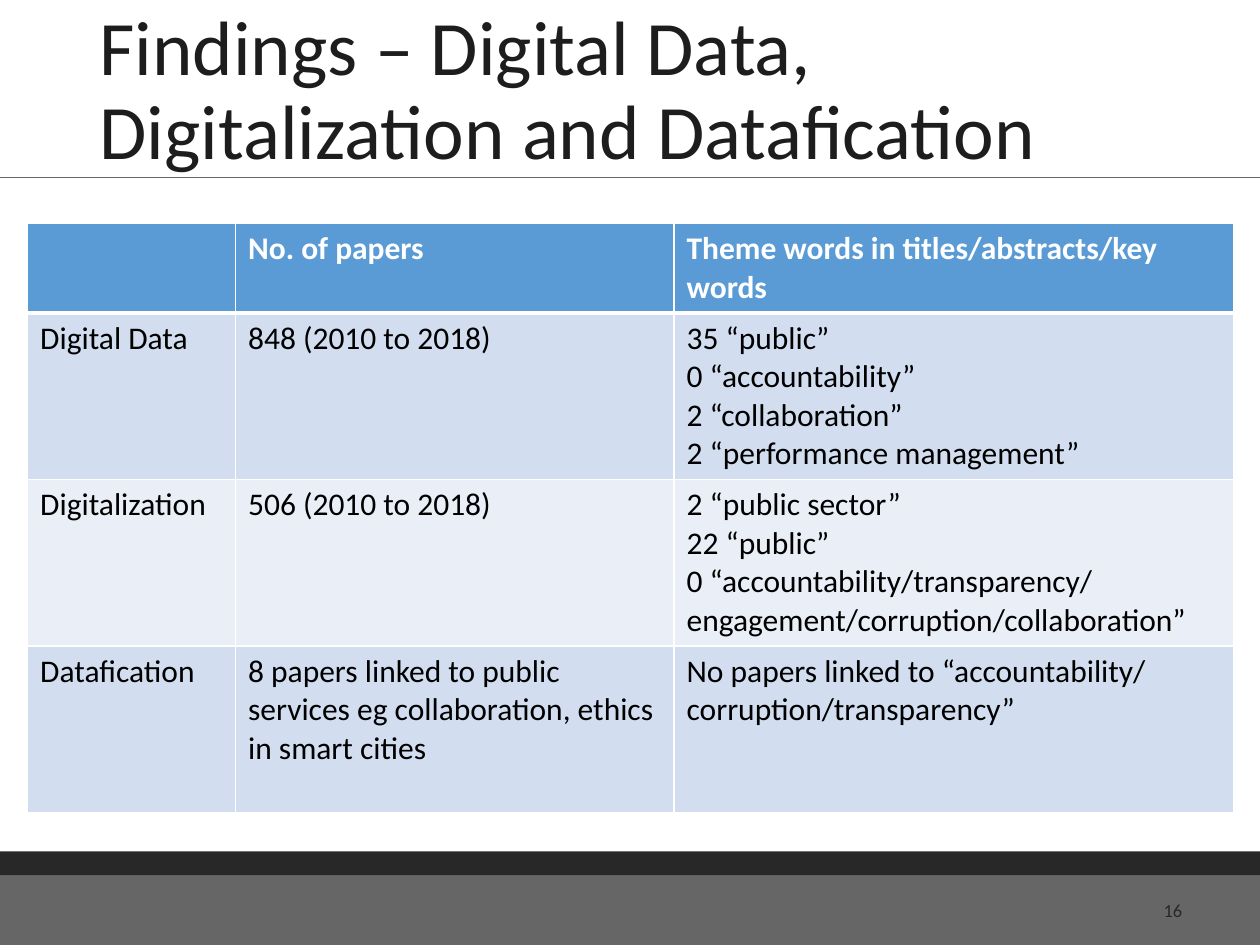
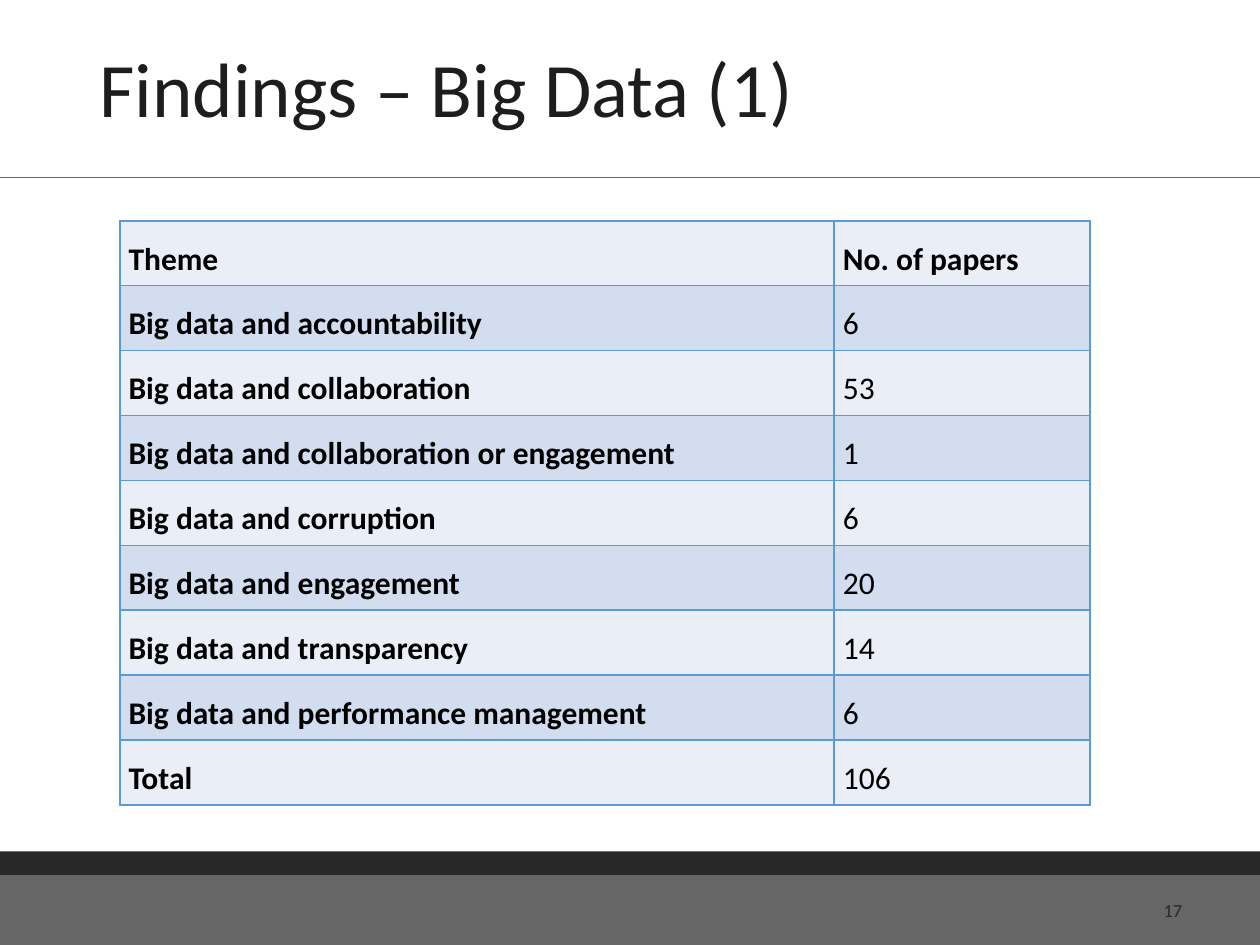
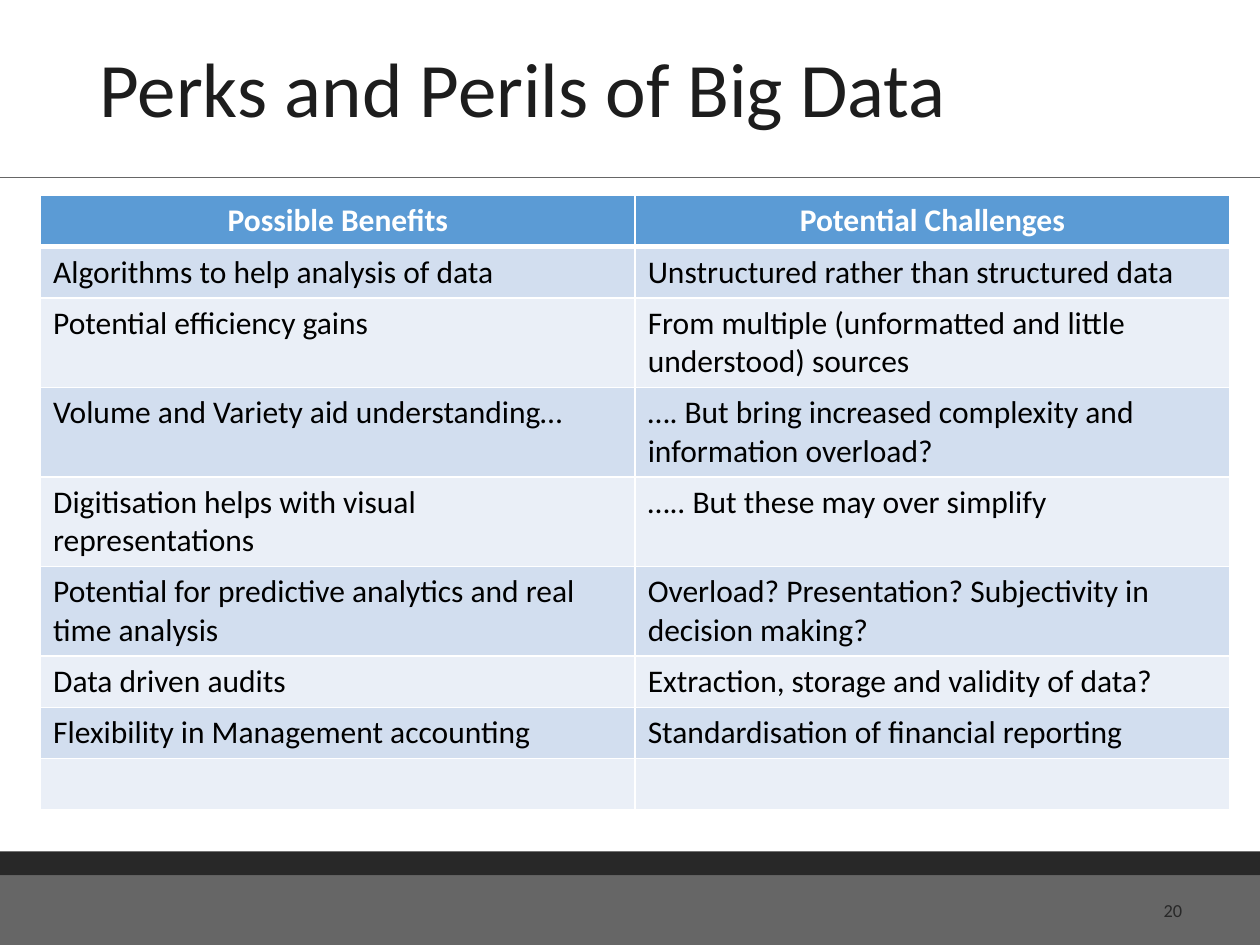
from dataclasses import dataclass
from typing import Optional

from lxml.etree import SubElement
from pptx import Presentation
from pptx.dml.color import RGBColor
from pptx.enum.shapes import MSO_CONNECTOR, MSO_SHAPE
from pptx.enum.text import MSO_ANCHOR, MSO_AUTO_SIZE, PP_ALIGN
from pptx.oxml.ns import qn
from pptx.util import Pt

COLORS = {
    "white": "FFFFFF",
    "black": "000000",
    "title": "1D1D1D",
    "dark": "282828",
    "gray": "666666",
    "blue": "5B9BD5",
    "mid": "D2DEEF",
    "pale": "EAEFF7",
}
FONT = "Calibri"
WIDTH, HEIGHT = 720, 540
RULE_TOP = 101.5
LINE, PAD = 22, 7.2


@dataclass
class Band:
    top: float
    height: float
    color: str


@dataclass
class Look:
    head: bool
    edge: str
    side: float
    pad: float
    align: Optional[PP_ALIGN] = None
    top_align: Optional[PP_ALIGN] = None
    space: float = 1.0


@dataclass
class Grid:
    left: float
    top: float
    cols: list[float]
    heights: list[float]
    rows: list[tuple[str, ...]]
    look: Look


@dataclass
class Page:
    title: str
    number: int
    grid: Grid
    title_width: float = 620.6


def tall(lines: list[int]) -> list[float]:
    return [PAD + LINE * count for count in lines]


BANDS = [Band(500.4, 39.6, "gray"), Band(486.5, 13.9, "dark")]
FILLED = Look(True, "white", 7.2, 3.6)
CENTERED = Look(True, "white", 7.2, 3.6, top_align=PP_ALIGN.CENTER)
LINED = Look(False, "blue", 5, 0, PP_ALIGN.JUSTIFY, PP_ALIGN.JUSTIFY, 1.5)

PAGES = [
    Page(
        "Findings – Digital Data, Digitalization and Datafication",
        16,
        Grid(
            15.8, 127.6, [118.8, 250.6, 319.6], tall([2, 4, 4, 4]),
            [
                ("", "No. of papers", "Theme words in titles/abstracts/key words"),
                (
                    "Digital Data",
                    "848 (2010 to 2018)",
                    "35 “public”\n0 “accountability”\n2 “collaboration”\n"
                    "2 “performance management”",
                ),
                (
                    "Digitalization",
                    "506 (2010 to 2018)",
                    "2 “public sector”\n22 “public”\n"
                    "0 “accountability/transparency/ engagement/corruption/collaboration”",
                ),
                (
                    "Datafication",
                    "8 papers linked to public services eg collaboration, ethics in smart cities",
                    "No papers linked to “accountability/ corruption/transparency”",
                ),
            ],
            FILLED,
        ),
    ),
    Page(
        "Findings – Big Data (1)",
        17,
        Grid(
            68.5, 126.2, [408.2, 146.2], [37.1] * 9,
            [
                ("Theme", "No. of papers"),
                ("Big data and accountability", "6"),
                ("Big data and collaboration", "53"),
                ("Big data and collaboration or engagement", "1"),
                ("Big data and corruption", "6"),
                ("Big data and engagement", "20"),
                ("Big data and transparency", "14"),
                ("Big data and performance management", "6"),
                ("Total", "106"),
            ],
            LINED,
        ),
    ),
    Page(
        "Perks and Perils of Big Data",
        20,
        Grid(
            23.2, 111.8, [339.8] * 2, tall([1, 1, 2, 2, 2, 2, 1, 1, 1]),
            [
                ("Possible Benefits", "Potential Challenges"),
                ("Algorithms to help analysis of data", "Unstructured rather than structured data"),
                (
                    "Potential efficiency gains",
                    "From multiple (unformatted and little understood) sources",
                ),
                (
                    "Volume and Variety aid understanding…",
                    "…. But bring increased complexity and information overload?",
                ),
                ("Digitisation helps with visual representations", "….. But these may over simplify"),
                (
                    "Potential for predictive analytics and real time analysis",
                    "Overload? Presentation? Subjectivity in decision making?",
                ),
                ("Data driven audits", "Extraction, storage and validity of data?"),
                ("Flexibility in Management accounting", "Standardisation of financial reporting"),
                ("", ""),
            ],
            CENTERED,
        ),
        639.4,
    ),
]


def paint(name: str) -> RGBColor:
    return RGBColor.from_string(COLORS[name])


def style(frame, size: float, color: str, bold=False, align=None, space=1.0) -> None:
    for para in frame.paragraphs:
        para.alignment = align
        para.line_spacing = space
        for run in para.runs:
            run.font.name = FONT
            run.font.size = Pt(size)
            run.font.bold = bold
            run.font.color.rgb = paint(color)


def draw_band(slide, band: Band) -> None:
    shape = slide.shapes.add_shape(
        MSO_SHAPE.RECTANGLE, 0, Pt(band.top), Pt(WIDTH), Pt(band.height)
    )
    shape.shadow.inherit = False
    shape.fill.solid()
    shape.fill.fore_color.rgb = paint(band.color)
    shape.line.fill.background()


def draw_frame(slide, page: Page) -> None:
    for band in BANDS:
        draw_band(slide, band)
    rule = slide.shapes.add_connector(
        MSO_CONNECTOR.STRAIGHT, 0, Pt(RULE_TOP), Pt(WIDTH), Pt(RULE_TOP)
    )
    rule.line.color.rgb = paint("gray")
    rule.line.width = Pt(0.5)
    SubElement(rule._element.spPr, qn("a:effectLst"))

    box = slide.shapes.add_textbox(Pt(520.6), Pt(509.8), Pt(162), Pt(20.2))
    box.text_frame.word_wrap = True
    box.text_frame.vertical_anchor = MSO_ANCHOR.MIDDLE
    box.text_frame.text = str(page.number)
    style(box.text_frame, 10.5, "dark", align=PP_ALIGN.RIGHT)

    title = slide.shapes.title
    title.left, title.top = Pt(49.7), Pt(0.7)
    title.width, title.height = Pt(page.title_width), Pt(104.4)
    title.text_frame.text = page.title
    title.text_frame.word_wrap = True
    title.text_frame.auto_size = MSO_AUTO_SIZE.NONE
    title.text_frame.vertical_anchor = MSO_ANCHOR.MIDDLE
    style(title.text_frame, 44, "title", align=PP_ALIGN.LEFT, space=0.9)


def draw_edge(cell, side: str, color: str, width: float) -> None:
    props = cell._tc.get_or_add_tcPr()
    edge = SubElement(props, qn(f"a:ln{side}"), w=str(Pt(width)))
    fill = SubElement(edge, qn("a:solidFill"))
    SubElement(fill, qn("a:srgbClr"), val=COLORS[color])


def draw_cell(cell, text: str, row: int, col: int, look: Look) -> None:
    head = look.head and row == 0
    for side in "LRTB":
        thick = look.head and (row, side) in ((0, "B"), (1, "T"))
        draw_edge(cell, side, look.edge, 3 if thick else 1)
    cell.fill.solid()
    shade = "mid" if row % 2 else "pale"
    cell.fill.fore_color.rgb = paint("blue" if head else shade)
    cell.margin_left = cell.margin_right = Pt(look.side)
    cell.margin_top = cell.margin_bottom = Pt(look.pad)
    cell.text_frame.text = text
    bold = row == 0 or (not look.head and col == 0)
    align = look.top_align if row == 0 else look.align
    style(cell.text_frame, 18, "white" if head else "black", bold, align, look.space)


def draw_grid(slide, grid: Grid) -> None:
    table = slide.shapes.add_table(
        len(grid.rows), len(grid.cols), Pt(grid.left), Pt(grid.top),
        Pt(sum(grid.cols)), Pt(sum(grid.heights)),
    ).table
    table.first_row = table.horz_banding = False
    for col, width in zip(table.columns, grid.cols):
        col.width = Pt(width)
    for row, height in zip(table.rows, grid.heights):
        row.height = Pt(height)
    for row, texts in enumerate(grid.rows):
        for col, text in enumerate(texts):
            draw_cell(table.cell(row, col), text, row, col, grid.look)


def main() -> None:
    deck = Presentation()
    deck.slide_width, deck.slide_height = Pt(WIDTH), Pt(HEIGHT)
    for page in PAGES:
        slide = deck.slides.add_slide(deck.slide_layouts[5])
        draw_frame(slide, page)
        draw_grid(slide, page.grid)
    deck.save("out.pptx")


if __name__ == "__main__":
    main()
